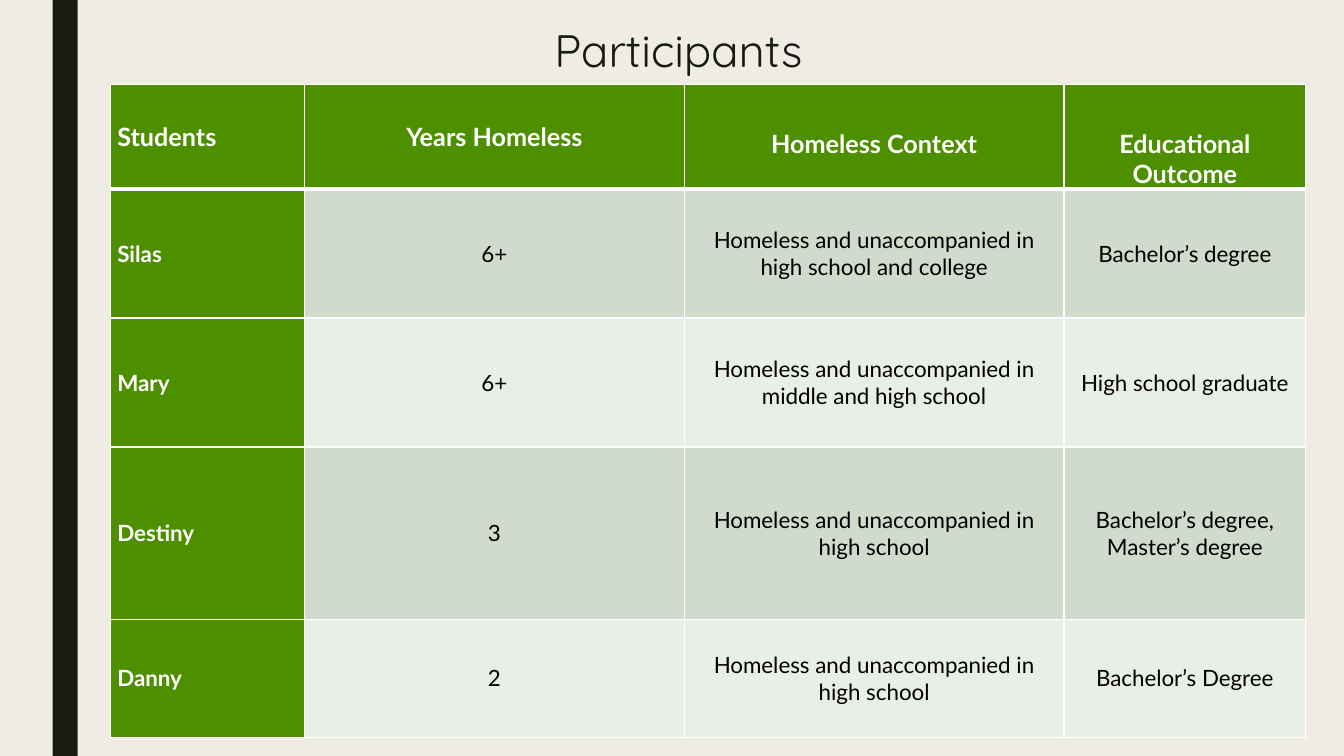
import pptx
import pptx.util
import pptx.dml.color
import pptx.enum.shapes
import pptx.enum.text
import pptx.oxml
import pptx.oxml.ns

Pt = pptx.util.Pt
ALIGN = pptx.enum.text.PP_ALIGN
ANCHOR = pptx.enum.text.MSO_ANCHOR

HEADS = ["Students", "Years Homeless", "Homeless Context", "Educational Outcome"]
STUDENTS = [
    ("Silas", "6+", "Homeless and unaccompanied in high school and college",
     "Bachelor’s degree"),
    ("Mary", "6+", "Homeless and unaccompanied in middle and high school",
     "High school graduate"),
    ("Destiny", "3", "Homeless and unaccompanied in high school",
     "Bachelor’s degree, Master’s degree"),
    ("Danny", "2", "Homeless and unaccompanied in high school",
     "Bachelor’s Degree"),
]
WIDTHS = [138.7, 271.3, 271.3, 172.6]
HEIGHTS = [74.4, 92.2, 92.2, 123, 84.5]
LEFT, TOP = 78.8, 60.5
DROP = 31.2  # the last two headings sit lower than the first two
DARK, CREAM, GREEN, WHITE, BLACK = "191B0E", "EFEDE3", "4E8F00", "FFFFFF", "000000"
BANDS = ["D0DBCC", "E9EEE7"]


def color(code):
    return pptx.dml.color.RGBColor.from_string(code)


def paint(fill, code):
    fill.solid()
    fill.fore_color.rgb = color(code)


def write(frame, text, size=16, font="Lato", ink=BLACK, bold=False,
          align=ALIGN.CENTER, gap=6, line=None):
    frame.word_wrap = True
    para = frame.paragraphs[0]
    para.alignment = align
    para.space_before = para.space_after = Pt(gap)
    if line:
        para.line_spacing = line
    run = para.add_run()
    run.text = text
    run.font.size = Pt(size)
    run.font.name = font
    run.font.bold = bold
    run.font.color.rgb = color(ink)


def edge(cell, **widths):
    """Draw white borders; keys are L, R, T, B and values are points."""
    props = cell._tc.get_or_add_tcPr()
    for spot, (side, width) in enumerate(widths.items()):
        props.insert(spot, pptx.oxml.parse_xml(
            f'<a:ln{side} {pptx.oxml.ns.nsdecls("a")} w="{Pt(width)}">'
            f'<a:solidFill><a:srgbClr val="{WHITE}"/></a:solidFill></a:ln{side}>'))


def main():
    deck = pptx.Presentation()
    deck.slide_width, deck.slide_height = Pt(960), Pt(540)
    slide = deck.slides.add_slide(deck.slide_layouts[5])
    paint(slide.background.fill, CREAM)

    bar = slide.shapes.add_shape(pptx.enum.shapes.MSO_SHAPE.RECTANGLE,
                                 Pt(37.5), 0, Pt(18), Pt(540))
    bar.shadow.inherit = False
    paint(bar.fill, DARK)
    bar.line.fill.background()

    title = slide.shapes.title
    title.left, title.top, title.width, title.height = (
        Pt(70.6), Pt(15.8), Pt(828), Pt(44))
    title.text_frame.vertical_anchor = ANCHOR.MIDDLE
    write(title.text_frame, "Participants", size=32.4, font="Quicksand",
          ink=DARK, gap=0, line=0.89)

    rows = [HEADS, *STUDENTS]
    table = slide.shapes.add_table(len(rows), len(HEADS), Pt(LEFT), Pt(TOP),
                                   Pt(sum(WIDTHS)), Pt(sum(HEIGHTS))).table
    table.first_col = True
    for col, width in zip(table.columns, WIDTHS):
        col.width = Pt(width)
    for r, (row, height) in enumerate(zip(rows, HEIGHTS)):
        table.rows[r].height = Pt(height)
        for c, text in enumerate(row):
            cell = table.cell(r, c)
            head, key = r == 0, r == 0 or c == 0
            low = head and c > 1
            cell.margin_left = cell.margin_right = Pt(5)
            cell.margin_top, cell.margin_bottom = Pt(DROP if low else 0), 0
            cell.vertical_anchor = ANCHOR.TOP if low else ANCHOR.MIDDLE
            paint(cell.fill, GREEN if key else BANDS[(r - 1) % 2])
            edge(cell, L=1, R=1, T=3 if r == 1 else 1, B=3 if head else 1)
            write(cell.text_frame, text, size=18 if head else 16, bold=key,
                  ink=WHITE if key else BLACK,
                  align=ALIGN.LEFT if c == 0 else ALIGN.CENTER)

    deck.save("out.pptx")


if __name__ == "__main__":
    main()
